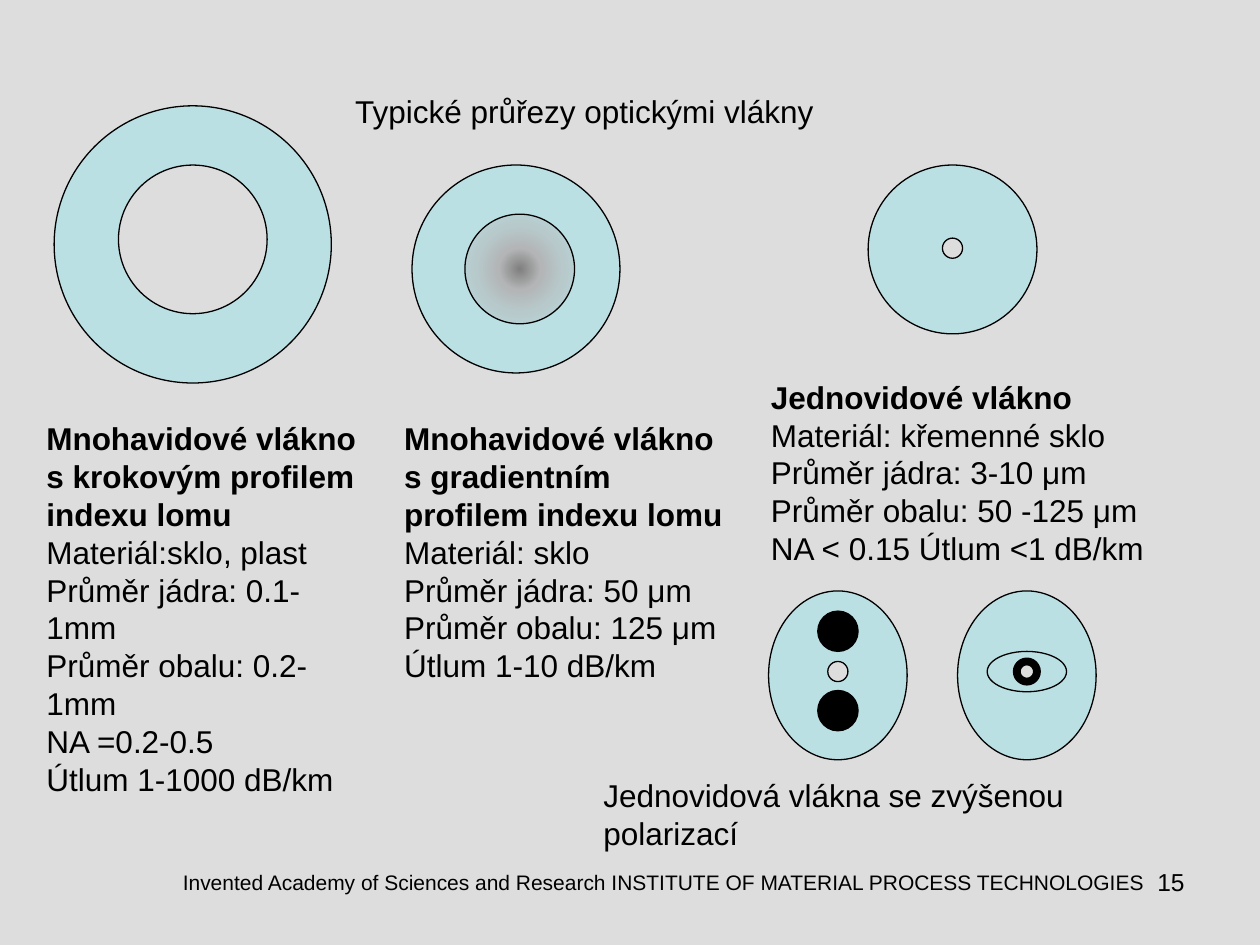
from dataclasses import dataclass
from typing import Optional

from pptx import Presentation
from pptx.dml.color import RGBColor as Rgb
from pptx.enum.shapes import MSO_SHAPE as Kind
from pptx.enum.text import PP_ALIGN as Align
from pptx.oxml import parse_xml
from pptx.oxml.ns import nsdecls
from pptx.util import Inches, Pt


@dataclass(frozen=True)
class Theme:
    back: str = "DDDDDD"
    clad: str = "BBE0E3"
    ink: str = "000000"
    fade: tuple = ((0, "808080"), (27, "B3B5B6"), (56, "B7C9CB"), (100, "BBE0E3"))
    font: str = "Arial"
    body: float = 18
    page: float = 14
    foot: float = 12
    thin: float = 0.75
    thick: float = 4.5


@dataclass(frozen=True)
class Oval:
    """An ellipse given by its centre and size in grid cells."""
    x: float
    y: float
    w: float
    h: Optional[float] = None
    fill: Optional[str] = None
    line: float = Theme.thin
    fade: bool = False


@dataclass(frozen=True)
class Note:
    """A fibre description: bold heading, then plain facts."""
    x: float
    y: float
    w: float
    h: float
    head: str
    facts: tuple


T = Theme()
CELL = Inches(0.1)  # the slide is 100 columns by 75 rows


def cells(*nums: float) -> list[int]:
    return [round(n * CELL) for n in nums]


def add_text(slide, lines, box, *, size=T.body, align=Align.LEFT, bold=0, inset=True):
    """Write lines in a box; the first `bold` lines are bold."""
    frame = slide.shapes.add_textbox(*cells(*box)).text_frame
    frame.word_wrap = True
    if not inset:
        frame.margin_left = frame.margin_right = 0
        frame.margin_top = frame.margin_bottom = 0
    for i, line in enumerate(lines):
        para = frame.paragraphs[0] if i == 0 else frame.add_paragraph()
        para.alignment = align
        run = para.add_run()
        run.text = line
        font = run.font
        font.name, font.size, font.bold = T.font, Pt(size), i < bold
        font.color.rgb = Rgb.from_string(T.ink)


def add_fade(shape) -> None:
    """Fill a shape with a gradient that spreads from its centre."""
    stops = "".join(
        f'<a:gs pos="{pos * 1000}"><a:srgbClr val="{tone}"/></a:gs>'
        for pos, tone in T.fade
    )
    xml = (
        f'<a:gradFill {nsdecls("a")} rotWithShape="1"><a:gsLst>{stops}</a:gsLst>'
        '<a:path path="circle"><a:fillToRect l="50000" t="50000" r="50000" b="50000"/>'
        "</a:path></a:gradFill>"
    )
    shape.element.spPr.insert(2, parse_xml(xml))


def add_oval(slide, oval: Oval) -> None:
    w, h = oval.w, oval.h or oval.w
    shape = slide.shapes.add_shape(
        Kind.OVAL, *cells(oval.x - w / 2, oval.y - h / 2, w, h)
    )
    shape.shadow.inherit = False
    if oval.fade:
        add_fade(shape)
    elif oval.fill:
        shape.fill.solid()
        shape.fill.fore_color.rgb = Rgb.from_string(oval.fill)
    else:
        shape.fill.background()
    shape.line.color.rgb = Rgb.from_string(T.ink)
    shape.line.width = Pt(oval.line)


OVALS = (
    # Step-index fibre
    Oval(15.3, 19.4, 22, fill=T.clad),
    Oval(15.3, 19, 11.8, fill=T.back),
    # Graded-index fibre
    Oval(40.95, 21.35, 16.5, fill=T.clad),
    Oval(41.25, 21.35, 8.7, fade=True),
    # Single-mode fibre
    Oval(75.6, 19.8, 13.4, fill=T.clad),
    Oval(75.6, 19.7, 1.6, fill=T.back),
    # Polarising fibre with two stress rods
    Oval(66.5, 53.6, 11, 13.4, fill=T.clad),
    *(Oval(66.5, y, 3.2, fill=T.ink) for y in (50.1, 56.4)),
    Oval(66.5, 53.3, 1.6, fill=T.back),
    # Polarising fibre with an elliptic layer
    Oval(81.5, 53.6, 11, 13.4, fill=T.clad),
    Oval(81.5, 53.3, 1.6, fill=T.back, line=T.thick),
    Oval(81.5, 53.3, 6.3, 3.2),
)

NOTES = (
    Note(2.7, 32.8, 27.6, 31, "Mnohavidové vlákno s krokovým profilem indexu lomu", (
        "Materiál:sklo, plast", "Průměr jádra: 0.1-1mm", "Průměr obalu: 0.2-1mm",
        "NA =0.2-0.5", "Útlum 1-1000 dB/km")),
    Note(31.1, 32.8, 27.6, 25, "Mnohavidové vlákno s gradientním profilem indexu lomu", (
        "Materiál: sklo", "Průměr jádra: 50 μm", "Průměr obalu: 125 μm",
        "Útlum 1-10 dB/km")),
    Note(60.2, 29.5, 36.2, 16, "Jednovidové vlákno", (
        "Materiál: křemenné sklo", "Průměr jádra: 3-10 μm",
        "Průměr obalu: 50 -125 μm", "NA < 0.15 Útlum <1 dB/km")),
)

FOOT = ("Invented Academy of Sciences and Research "
        "INSTITUTE OF MATERIAL PROCESS TECHNOLOGIES")


def main() -> None:
    deck = Presentation()
    deck.slide_width, deck.slide_height = cells(100, 75)
    slide = deck.slides.add_slide(deck.slide_layouts[6])
    slide.background.fill.solid()
    slide.background.fill.fore_color.rgb = Rgb.from_string(T.back)

    # Page number and footer
    add_text(slide, ["15"], (71.7, 68.3, 23.3, 5.2), size=T.page, align=Align.RIGHT)
    add_text(slide, [FOOT], (9.8, 69, 85.8, 2), size=T.foot,
             align=Align.CENTER, inset=False)

    # Fibre cross-sections
    for oval in OVALS:
        add_oval(slide, oval)

    # Title, descriptions and caption
    add_text(slide, ["Typické průřezy optickými vlákny"], (27.2, 6.8, 42.5, 4))
    for note in NOTES:
        add_text(slide, [note.head, *note.facts],
                 (note.x, note.y, note.w, note.h), bold=1)
    add_text(slide, ["Jednovidová vlákna se zvýšenou polarizací"],
             (46.9, 61.1, 47.2, 7))

    deck.save("out.pptx")


if __name__ == "__main__":
    main()
